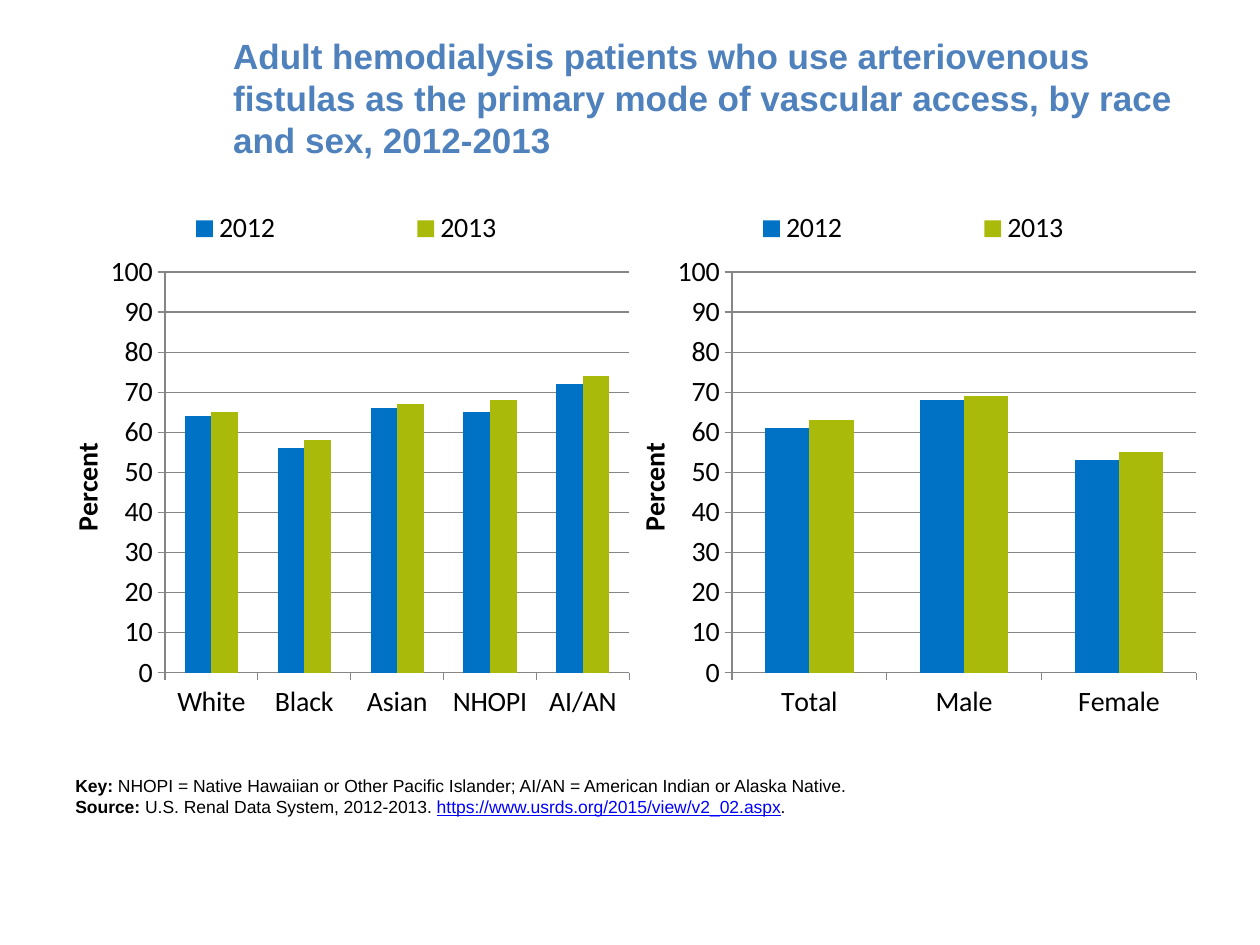
from lxml import etree
from pptx import Presentation
from pptx.chart.data import CategoryChartData
from pptx.dml.color import RGBColor
from pptx.enum.chart import XL_CHART_TYPE, XL_LEGEND_POSITION, XL_TICK_MARK
from pptx.enum.text import MSO_ANCHOR, MSO_AUTO_SIZE, PP_ALIGN
from pptx.oxml import parse_xml
from pptx.oxml.ns import nsdecls
from pptx.util import Inches, Pt

COLUMNS = XL_CHART_TYPE.COLUMN_CLUSTERED
LEGEND_TOP = XL_LEGEND_POSITION.TOP
TICK_OUT = XL_TICK_MARK.OUTSIDE
MIDDLE = MSO_ANCHOR.MIDDLE
NO_FIT = MSO_AUTO_SIZE.NONE
LEFT = PP_ALIGN.LEFT

COLORS = {
    "title": "4F81BD", "text": "000000", "link": "0000FF",
    "2012": "0072C6", "2013": "AABA0A", "grid": "868686",
}
CHART_TEXT = {"name": "Calibri", "size": Pt(16), "bold": False}
NOTE_TEXT = {"name": "Arial", "size": Pt(10)}
TITLE_TEXT = {"name": "Arial", "size": Pt(20), "bold": True}

TITLE = ("Adult hemodialysis patients who use arteriovenous fistulas as the "
         "primary mode of vascular access, by race and sex, 2012-2013")
CHARTS = [
    (["White", "Black", "Asian", "NHOPI", "AI/AN"],
     {"2012": [64, 56, 66, 65, 72], "2013": [65, 58, 67, 68, 74]}),
    (["Total", "Male", "Female"],
     {"2012": [61, 68, 53], "2013": [63, 69, 55]}),
]
NOTES = [
    [("Key: ", "text", {"bold": True}),
     ("NHOPI = Native Hawaiian or Other Pacific Islander; "
      "AI/AN = American Indian or Alaska Native.", "text", {})],
    [("Source: ", "text", {"bold": True}),
     ("U.S. Renal Data System, 2012-2013. ", "text", {}),
     ("https://www.usrds.org/2015/view/v2_02.aspx", "link", {"underline": True}),
     (".", "text", {})],
]


def rgb(name):
    """Return the named colour."""
    return RGBColor.from_string(COLORS[name])


def format_font(font, color, values):
    """Set a font's colour and its other attributes."""
    for key, value in values.items():
        setattr(font, key, value)
    font.color.rgb = rgb(color)


def set_layout(parent, position, **fields):
    """Give a chart part a manual layout."""
    for old in parent.findall("{*}layout"):
        parent.remove(old)
    layout = parse_xml(f'<c:layout {nsdecls("c")}><c:manualLayout/></c:layout>')
    namespace = etree.QName(layout).namespace
    for key, value in fields.items():
        etree.SubElement(layout[0], f"{{{namespace}}}{key}").set("val", str(value))
    parent.insert(position, layout)


def format_axis(axis):
    """Set an axis's font, line and tick marks."""
    format_font(axis.tick_labels.font, "text", CHART_TEXT)
    axis.format.line.color.rgb = rgb("grid")
    axis.format.line.width = Pt(0.75)
    axis.major_tick_mark = TICK_OUT


def format_value_axis(axis):
    """Set the percent scale, its gridlines and its title."""
    format_axis(axis)
    axis.minimum_scale, axis.maximum_scale, axis.major_unit = 0, 100, 10
    axis.tick_labels.number_format = "0"
    axis.tick_labels.number_format_is_linked = False
    axis.has_major_gridlines = True
    axis.major_gridlines.format.line.color.rgb = rgb("grid")
    axis.major_gridlines.format.line.width = Pt(0.75)
    span = axis.axis_title.text_frame.paragraphs[0].add_run()
    span.text = "Percent"
    format_font(span.font, "text", {**CHART_TEXT, "bold": True})


def add_column_chart(page, left, categories, series):
    """Add a chart that compares the two years."""
    data = CategoryChartData(number_format="0")
    data.categories = categories
    for year, values in series.items():
        data.add_series(year, values)
    chart = page.shapes.add_chart(
        COLUMNS, left, Inches(1.6), Inches(4.5), Inches(4.3), data).chart
    format_font(chart.font, "text", NOTE_TEXT)
    chart.has_title = False
    chart.has_legend = True
    chart.legend.position = LEGEND_TOP
    chart.legend.include_in_layout = False
    format_font(chart.legend.font, "text", CHART_TEXT)
    format_axis(chart.category_axis)
    format_value_axis(chart.value_axis)
    plot = chart.plots[0]
    plot.gap_width, plot.overlap, plot.vary_by_categories = 150, 0, False
    for bars in plot.series:
        bars.invert_if_negative = False
        bars.format.fill.solid()
        bars.format.fill.fore_color.rgb = rgb(bars.name)
    plot_area = chart.element.find(".//{*}plotArea")
    set_layout(plot_area, 0, layoutTarget="inner", xMode="edge", yMode="edge",
               x=0.18, y=0.13, w=0.82, h=0.74)
    legend = chart.element.find(".//{*}legend")
    set_layout(legend, 1, xMode="edge", yMode="edge", x=0, y=0, w=1, h=0.1)


def set_title(page):
    """Place and format the title."""
    box = page.shapes.title
    box.left, box.top = Inches(1.75), Inches(0.3)
    box.width, box.height = Inches(7.75), Inches(0.95)
    frame = box.text_frame
    frame.text = TITLE
    frame.vertical_anchor = MIDDLE
    frame.auto_size = NO_FIT
    para = frame.paragraphs[0]
    para.alignment = LEFT
    format_font(para.runs[0].font, "title", TITLE_TEXT)


def add_notes(page):
    """Add the key and the source line."""
    box = page.shapes.add_textbox(Inches(0.5), Inches(6.1), Inches(8.1), Inches(0.5))
    frame = box.text_frame
    frame.word_wrap = True
    for index, spans in enumerate(NOTES):
        para = frame.add_paragraph() if index else frame.paragraphs[0]
        for text, color, style in spans:
            span = para.add_run()
            span.text = text
            format_font(span.font, color, {**NOTE_TEXT, **style})


def main():
    """Build and save the slide."""
    deck = Presentation()
    deck.slide_width, deck.slide_height = Inches(10), Inches(7.5)
    page = deck.slides.add_slide(deck.slide_layouts[5])
    set_title(page)
    for index, (categories, series) in enumerate(CHARTS):
        add_column_chart(page, Inches(0.5 + 4.5 * index), categories, series)
    add_notes(page)
    deck.save("out.pptx")


if __name__ == "__main__":
    main()
